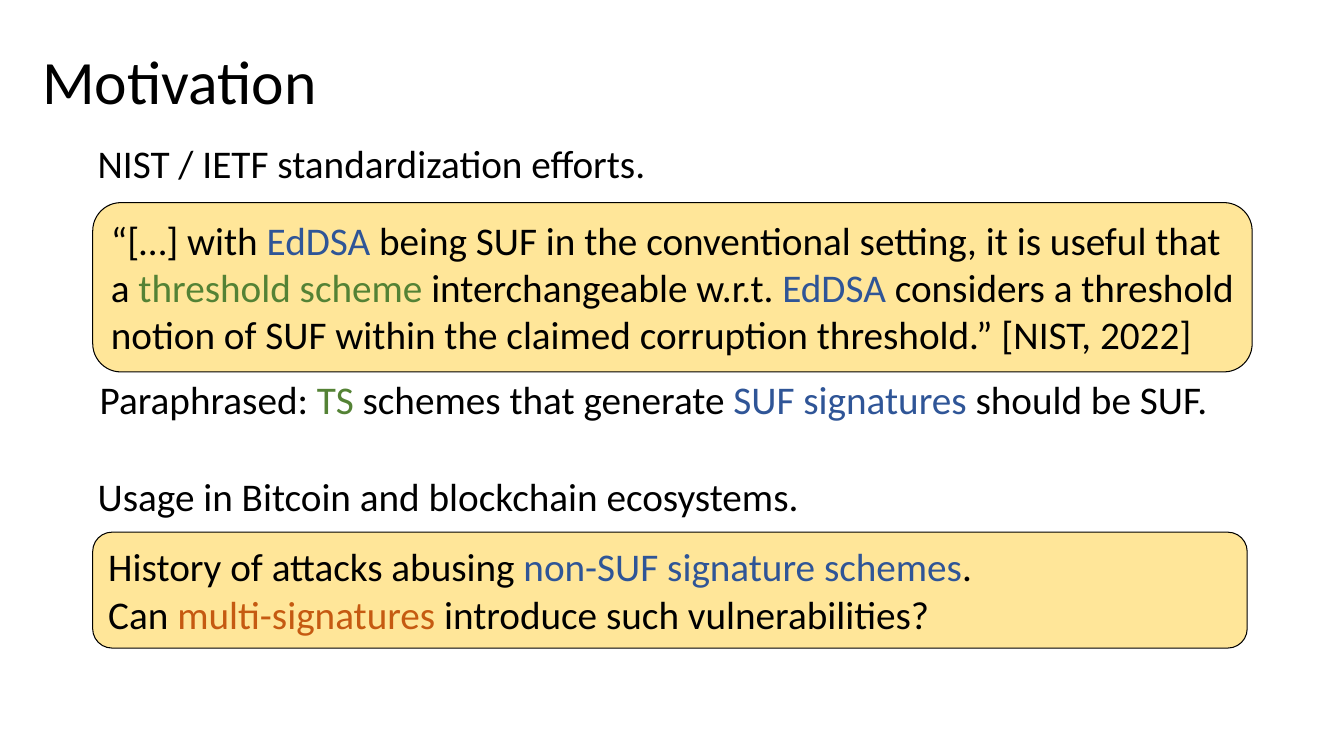
from dataclasses import dataclass

from pptx import Presentation
from pptx.dml.color import RGBColor as Rgb
from pptx.enum.shapes import MSO_SHAPE as Form
from pptx.enum.text import MSO_ANCHOR as Anchor, PP_ALIGN as Align
from pptx.util import Inches, Pt

WIDE, HIGH = Inches(13.33), Inches(7.5)
HUES = {"ink": "000000", "blue": "2F5597", "green": "548235",
        "rust": "C55A11", "sand": "FFE699"}

Run = tuple[str, str]  # wording, hue
Line = list[Run]


@dataclass
class Block:
    """Place and size in percent of the slide, with the text inside."""
    left: float
    top: float
    width: float
    height: float
    lines: list[Line]
    size: int = 28
    space: float = 0.9
    anchor: Anchor = Anchor.TOP
    card: bool = False


def hue(name: str) -> Rgb:
    return Rgb.from_string(HUES[name])


def write(frame, lines: list[Line], *, size: int, space: float,
          anchor: Anchor) -> None:
    frame.word_wrap = True
    frame.vertical_anchor = anchor
    for i, line in enumerate(lines):
        para = frame.paragraphs[0] if i == 0 else frame.add_paragraph()
        para.alignment = Align.LEFT
        para.line_spacing = space
        for text, color in line:
            run = para.add_run()
            run.text = text
            run.font.name = "Calibri"
            run.font.size = Pt(size)
            run.font.color.rgb = hue(color)


def draw(slide, block: Block) -> None:
    area = (int(WIDE * block.left / 100), int(HIGH * block.top / 100),
            int(WIDE * block.width / 100), int(HIGH * block.height / 100))
    if block.card:
        shape = slide.shapes.add_shape(Form.ROUNDED_RECTANGLE, *area)
        shape.shadow.inherit = False
        shape.fill.solid()
        shape.fill.fore_color.rgb = hue("sand")
        shape.line.color.rgb = hue("ink")
        shape.line.width = Pt(0.75)
    else:
        shape = slide.shapes.add_textbox(*area)
    write(shape.text_frame, block.lines, size=block.size,
          space=block.space, anchor=block.anchor)


BLOCKS = [
    # Title
    Block(2.4, 3.87, 86.27, 14.67, [[("Motivation", "ink")]],
          size=44, anchor=Anchor.MIDDLE),
    # Standards
    Block(6.53, 18.53, 86.27, 8.13,
          [[("NIST / IETF standardization efforts.", "ink")]]),
    Block(6.9, 26.8, 86.27, 22.4, [[
        ("“[…] with ", "ink"), ("EdDSA", "blue"),
        (" being SUF in the conventional setting, it is useful that a ", "ink"),
        ("threshold scheme", "green"),
        (" interchangeable w.r.t. ", "ink"), ("EdDSA", "blue"),
        (" considers a threshold notion of SUF within the claimed "
         "corruption threshold.” [NIST, 2022]", "ink"),
    ]], space=1.0, card=True),
    Block(6.68, 49.73, 87.25, 8.4, [[
        ("Paraphrased: ", "ink"), ("TS", "green"),
        (" schemes that generate ", "ink"), ("SUF signatures ", "blue"),
        ("should be SUF.", "ink"),
    ]]),
    # Usage
    Block(6.53, 62.53, 86.27, 8.4,
          [[("Usage in Bitcoin and blockchain ecosystems.", "ink")]]),
    Block(6.9, 70.4, 85.9, 15.33, [
        [("History of attacks abusing ", "ink"),
         ("non-SUF signature schemes", "blue"), (".", "ink")],
        [("Can ", "ink"), ("multi-signatures ", "rust"),
         ("introduce such vulnerabilities?", "ink")],
    ], space=1.0, card=True),
]


def main() -> None:
    deck = Presentation()
    deck.slide_width, deck.slide_height = WIDE, HIGH
    slide = deck.slides.add_slide(deck.slide_layouts[6])
    for block in BLOCKS:
        draw(slide, block)
    deck.save("out.pptx")


if __name__ == "__main__":
    main()
